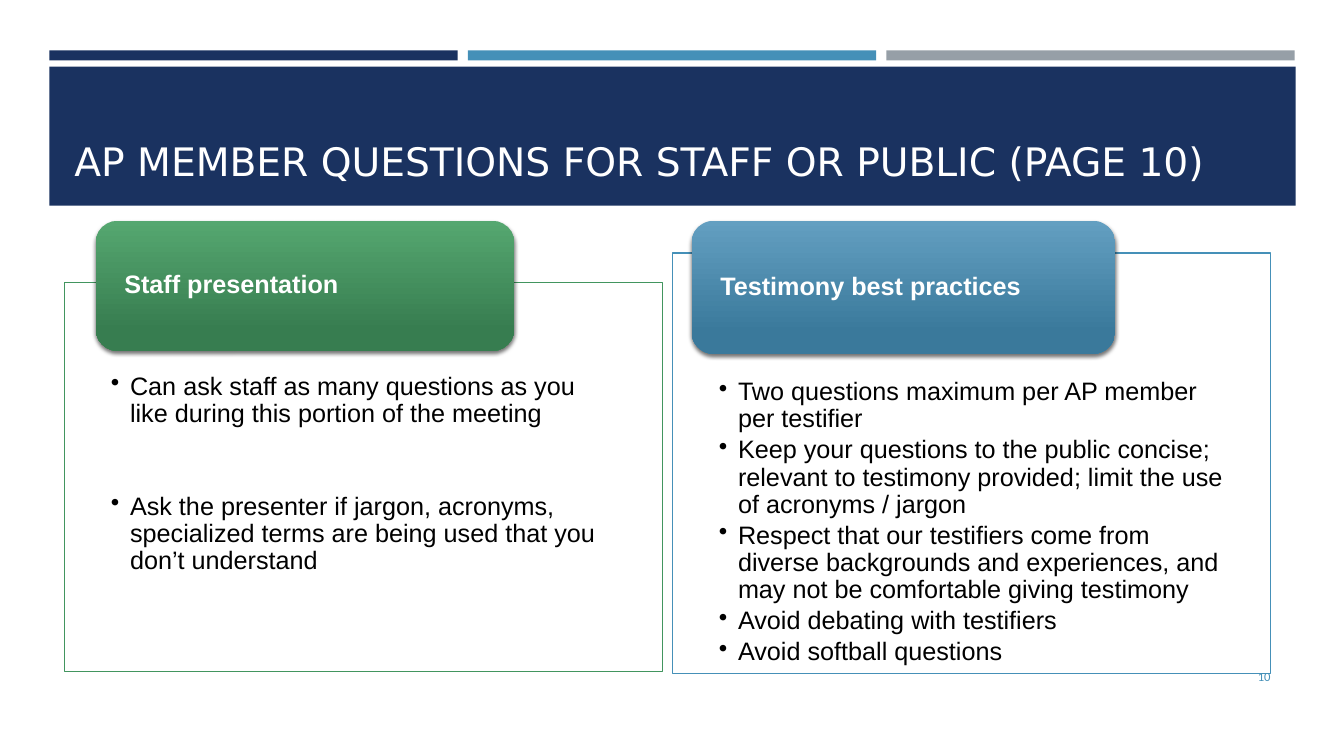
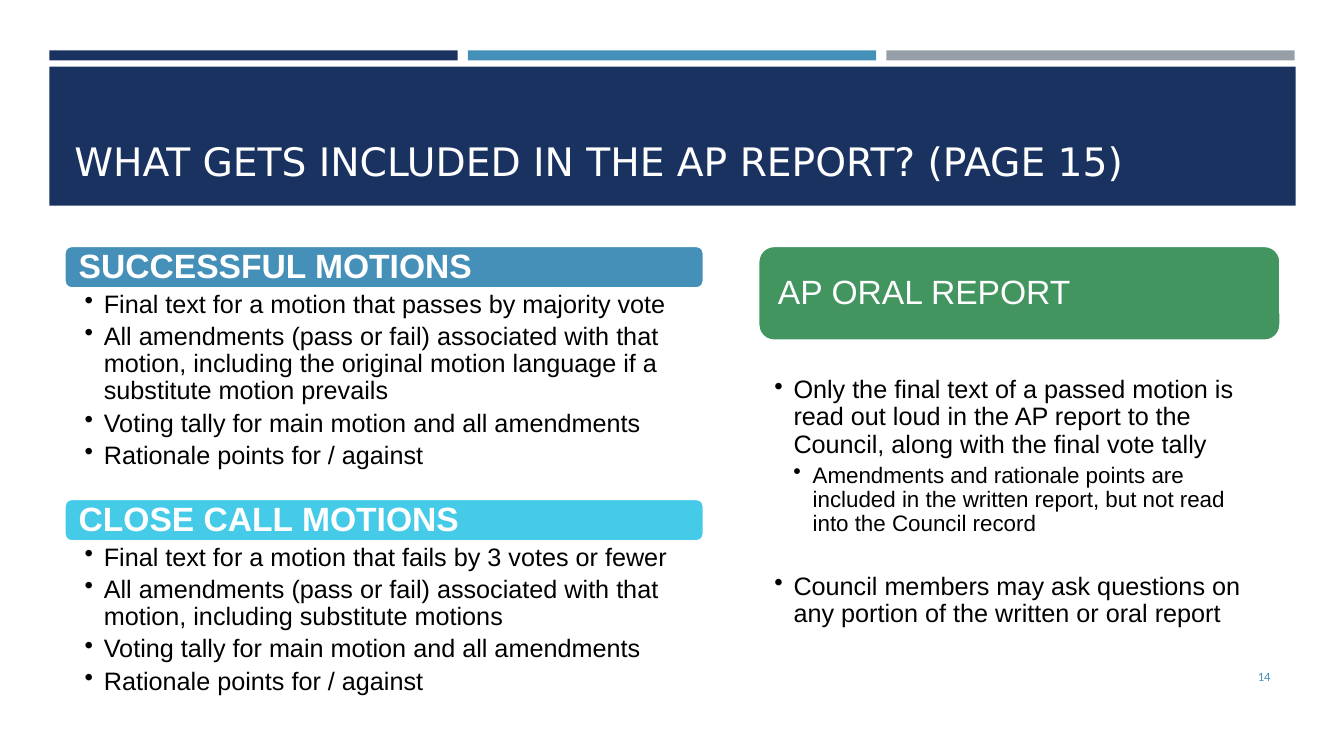
"""Builds two slides on questions and reports for AP members."""
from typing import NamedTuple

from lxml import etree
from pptx import Presentation
from pptx.dml.color import RGBColor
from pptx.enum.shapes import MSO_SHAPE
from pptx.enum.text import MSO_ANCHOR, PP_ALIGN
from pptx.oxml.ns import qn
from pptx.util import Emu, Pt

RECTANGLE = MSO_SHAPE.RECTANGLE
ROUNDED = MSO_SHAPE.ROUNDED_RECTANGLE
TOP, MIDDLE, BOTTOM = MSO_ANCHOR.TOP, MSO_ANCHOR.MIDDLE, MSO_ANCHOR.BOTTOM
LEFT, RIGHT = PP_ALIGN.LEFT, PP_ALIGN.RIGHT

EMU_PER_PX = 9144
BLANK_LAYOUT = 6
COLORS = {
    "navy": "1A3260", "blue": "4590B8", "gray": "969FA7", "green": "42955F",
    "cyan": "45CBE8", "white": "FFFFFF", "black": "000000",
    "blue light": "639FC1", "blue dark": "3A799B",
    "green light": "55A770", "green dark": "377D50",
}


class Bullet(NamedTuple):
    """A list item with its level and the space before it in points."""
    text: str
    level: int = 0
    before: float = 0


def px(length):
    return Emu(length * EMU_PER_PX)


def rgb(name):
    return RGBColor.from_string(COLORS[name])


class Deck:
    """Holds the shared style, the presentation and the current slide."""

    body_font = "Arial"
    title_font = "DejaVu Sans"
    number_font = "Calibri"
    indent = 19

    def __init__(self):
        self.presentation = Presentation()
        self.presentation.slide_width = px(1333)
        self.presentation.slide_height = px(750)
        self.slide = None

    def new_slide(self, title, number):
        layout = self.presentation.slide_layouts[BLANK_LAYOUT]
        self.slide = self.presentation.slides.add_slide(layout)
        for column, color in enumerate(("navy", "blue", "gray")):
            self.box((49 + column * 415, 50, 405, 10), color)
        self.box((49, 66, 1236, 138), "navy")
        title_box = self.text_box((64, 80, 1206, 108), (10, 5, 10, 5), BOTTOM)
        self.add_text(title_box.text_frame.paragraphs[0], title, 28, "white",
                      self.title_font)
        number_box = self.text_box((1155, 651, 115, 40), (10, 5, 10, 5), MIDDLE)
        paragraph = number_box.text_frame.paragraphs[0]
        paragraph.alignment = RIGHT
        self.add_text(paragraph, number, 9, "blue", self.number_font)

    def box(self, area, fill, kind=RECTANGLE, line=None, line_width=1):
        shape = self.slide.shapes.add_shape(kind, *map(px, area))
        shape.shadow.inherit = False
        shape.fill.solid()
        shape.fill.fore_color.rgb = rgb(fill)
        if line:
            shape.line.color.rgb = rgb(line)
            shape.line.width = Pt(line_width)
        else:
            shape.line.fill.background()
        return shape

    def text_box(self, area, insets, anchor=TOP):
        shape = self.slide.shapes.add_textbox(*map(px, area))
        self.set_frame(shape, insets, anchor)
        return shape

    def set_frame(self, shape, insets, anchor):
        frame = shape.text_frame
        frame.word_wrap = True
        frame.vertical_anchor = anchor
        (frame.margin_left, frame.margin_top,
         frame.margin_right, frame.margin_bottom) = map(px, insets)

    def add_text(self, paragraph, text, size, color, font, bold=False):
        run = paragraph.add_run()
        run.text = text
        run.font.size = Pt(size)
        run.font.name = font
        run.font.bold = bold
        run.font.color.rgb = rgb(color)

    def label(self, shape, text, size, inset, bold):
        self.set_frame(shape, (inset, 0, inset, 0), MIDDLE)
        paragraph = shape.text_frame.paragraphs[0]
        paragraph.alignment = LEFT
        paragraph.line_spacing = 0.9
        self.add_text(paragraph, text, size, "white", self.body_font, bold)

    def banner(self, area, text, fill, inset=12, bold=True):
        shape = self.box(area, fill, ROUNDED, "white", 1.75)
        self.label(shape, text, 24, inset, bold)

    def glossy_header(self, area, text, color):
        shape = self.box(area, color, ROUNDED)
        shape.fill.gradient()
        shape.fill.gradient_angle = 270
        shades = ((0, f"{color} light"), (0.84, f"{color} dark"))
        for stop, (position, shade) in zip(shape.fill.gradient_stops, shades):
            stop.position = position
            stop.color.rgb = rgb(shade)
        self.drop_shadow(shape)
        self.label(shape, text, 18, 22, True)

    def drop_shadow(self, shape):
        effects = shape._element.spPr.find(qn("a:effectLst"))
        shadow = etree.SubElement(
            effects, qn("a:outerShdw"), blurRad=str(Pt(3)), dist=str(Pt(2)),
            dir="5400000", rotWithShape="0")
        color = etree.SubElement(shadow, qn("a:srgbClr"), val=COLORS["black"])
        etree.SubElement(color, qn("a:alpha"), val="55000")

    def panel(self, area, color, top_inset, bullets):
        shape = self.box(area, "white", line=color)
        self.set_frame(shape, (46, top_inset, 46, 0), TOP)
        self.bullets(shape, bullets, 2.7)

    def bullet_box(self, area, insets, bullets):
        self.bullets(self.text_box(area, insets), bullets, 3.6)

    def bullets(self, shape, bullets, after):
        frame = shape.text_frame
        for index, bullet in enumerate(bullets):
            paragraph = frame.add_paragraph() if index else frame.paragraphs[0]
            paragraph.level = bullet.level
            paragraph.alignment = LEFT
            paragraph.line_spacing = 0.9
            paragraph.space_before = Pt(bullet.before)
            paragraph.space_after = Pt(after)
            properties = paragraph._p.get_or_add_pPr()
            properties.set("marL", str(px(self.indent * (bullet.level + 1))))
            properties.set("indent", str(px(-self.indent)))
            etree.SubElement(properties, qn("a:buChar"), char="•")
            self.add_text(paragraph, bullet.text, 18 - 2 * bullet.level,
                          "black", self.body_font)


def add_questions_slide(deck):
    deck.new_slide("AP MEMBER QUESTIONS FOR STAFF OR PUBLIC (PAGE 10)", "10")
    deck.panel((667, 251, 593, 417), "blue", 125, [
        Bullet("Two questions maximum per AP member per testifier"),
        Bullet("Keep your questions to the public concise; relevant to "
               "testimony provided; limit the use of acronyms / jargon"),
        Bullet("Respect that our testifiers come from diverse backgrounds and "
               "experiences, and may not be comfortable giving testimony"),
        Bullet("Avoid debating with testifiers"),
        Bullet("Avoid softball questions"),
    ])
    deck.glossy_header((686, 219, 420, 132), "Testimony best practices", "blue")
    deck.panel((64, 280, 593, 386), "green", 91, [
        Bullet("Can ask staff as many questions as you like during this "
               "portion of the meeting"),
        Bullet("Ask the presenter if jargon, acronyms, specialized terms are "
               "being used that you don’t understand", before=44),
    ])
    deck.glossy_header((95, 219, 415, 129), "Staff presentation", "green")


def add_report_slide(deck):
    deck.new_slide("WHAT GETS INCLUDED IN THE AP REPORT? (PAGE 15)", "14")
    motions = (
        ("SUCCESSFUL MOTIONS", "blue", "passes by majority vote",
         "the original motion language if a substitute motion prevails"),
        ("CLOSE CALL MOTIONS", "cyan", "fails by 3 votes or fewer",
         "substitute motions"),
    )
    for row, (heading, color, outcome, included) in enumerate(motions):
        top = 244 + row * 251
        deck.banner((64, top, 634, 42), heading, color)
        deck.bullet_box((64, top + 42, 634, 170), (20, 3, 14, 3), [
            Bullet(f"Final text for a motion that {outcome}"),
            Bullet("All amendments (pass or fail) associated with that motion, "
                   f"including {included}"),
            Bullet("Voting tally for main motion and all amendments"),
            Bullet("Rationale points for / against"),
        ])
    deck.banner((752, 244, 518, 94), "AP ORAL REPORT", "green", 15, False)
    deck.bullet_box((752, 338, 518, 312), (16, 36, 14, 3), [
        Bullet("Only the final text of a passed motion is read out loud in the "
               "AP report to the Council, along with the final vote tally"),
        Bullet("Amendments and rationale points are included in the written "
               "report, but not read into the Council record", level=1),
        Bullet("Council members may ask questions on any portion of the "
               "written or oral report", before=23),
    ])


def main():
    deck = Deck()
    add_questions_slide(deck)
    add_report_slide(deck)
    deck.presentation.save("out.pptx")


if __name__ == "__main__":
    main()
